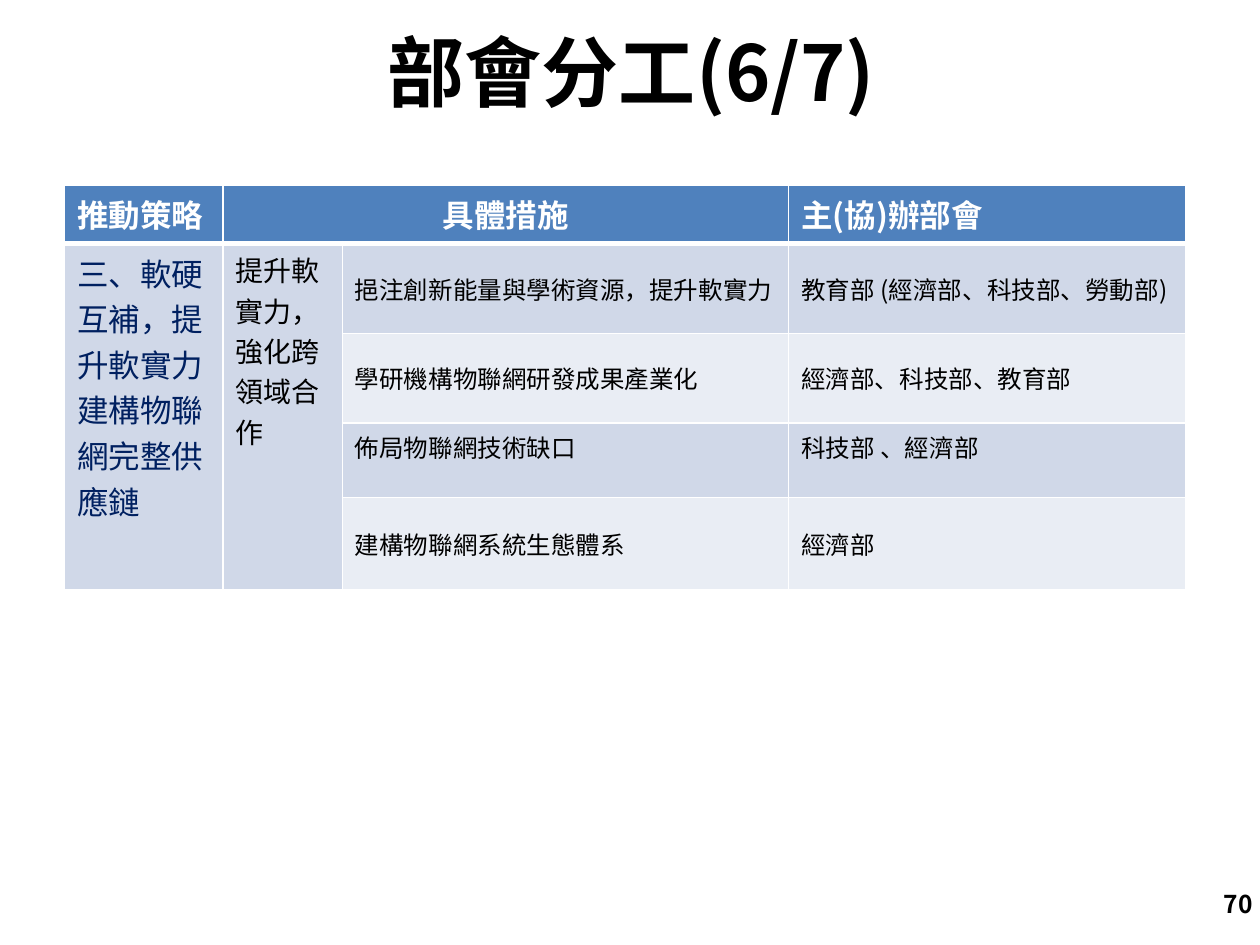
from lxml import etree
from pptx import Presentation
from pptx.dml.color import RGBColor
from pptx.enum.text import MSO_ANCHOR, PP_ALIGN
from pptx.oxml.ns import qn
from pptx.util import Cm, Pt

WHITE = RGBColor(0xFF, 0xFF, 0xFF)
BLACK = RGBColor(0, 0, 0)
NAVY = RGBColor(0x00, 0x20, 0x60)
BLUE = RGBColor(0x4F, 0x81, 0xBD)
BAND_DARK = RGBColor(0xD0, 0xD8, 0xE8)
BAND_LIGHT = RGBColor(0xE9, 0xED, 0xF4)
LEFT, CENTER, RIGHT = PP_ALIGN.LEFT, PP_ALIGN.CENTER, PP_ALIGN.RIGHT
TOP, MIDDLE, BOTTOM = MSO_ANCHOR.TOP, MSO_ANCHOR.MIDDLE, MSO_ANCHOR.BOTTOM
FONT = "Noto Sans CJK SC"


class Deck:
    def __init__(self):
        self.prs = Presentation()
        self.prs.slide_width, self.prs.slide_height = Cm(25.4), Cm(19.05)
        self.s = self.prs.slides.add_slide(self.prs.slide_layouts[5])

    def add_text(self, tf, text, size, color=BLACK, bold=False, align=LEFT):
        p = tf.paragraphs[0]
        p.alignment = align
        r = p.add_run()
        r.text = text
        for name, value in {"name": FONT, "size": Pt(size), "bold": bold}.items():
            setattr(r.font, name, value)
        r.font.color.rgb = color
        etree.SubElement(r.font._element, qn("a:ea"), typeface=FONT)
        return p

    def place(self, sp, box, anchor):
        sp.left, sp.top, sp.width, sp.height = (Cm(v) for v in box)
        sp.text_frame.word_wrap = True
        sp.text_frame.vertical_anchor = anchor
        return sp.text_frame

    def title(self, text, box):
        tf = self.place(self.s.shapes.title, box, BOTTOM)
        self.add_text(tf, text, 44, bold=True, align=CENTER).line_spacing = 0.9

    def page_number(self, text, box):
        sp = self.s.shapes.add_textbox(0, 0, 0, 0)
        self.add_text(self.place(sp, box, MIDDLE), text, 14, bold=True, align=RIGHT)

    def borders(self, cell, widths):
        tc_pr = cell._tc.get_or_add_tcPr()
        for i, (side, width) in enumerate(widths.items()):
            ln = etree.Element(qn("a:ln" + side), w=str(Pt(width)))
            fill = etree.SubElement(ln, qn("a:solidFill"))
            etree.SubElement(fill, qn("a:srgbClr"), val=str(WHITE))
            tc_pr.insert(i, ln)

    def table(self, left, top, cols, rows):
        shape = self.s.shapes.add_table(len(rows), len(cols), Cm(left), Cm(top),
                                        Cm(sum(cols)), Cm(sum(rows)))
        table = shape.table
        for col, width in zip(table.columns, cols):
            col.width = Cm(width)
        for row, height in zip(table.rows, rows):
            row.height = Cm(height)
        # Header colour, then alternating bands beside the merged columns
        for i in range(len(rows)):
            for j in range(len(cols)):
                cell = table.cell(i, j)
                cell.fill.solid()
                dark = j < 2 or i % 2
                cell.fill.fore_color.rgb = (
                    BLUE if i == 0 else BAND_DARK if dark else BAND_LIGHT)
                self.borders(cell, {"L": 1, "R": 1, "T": 3 if i == 1 else 1,
                                    "B": 3 if i == 0 else 1})
        return table

    def cell(self, cell, text, size, anchor=TOP, **style):
        cell.vertical_anchor = anchor
        self.add_text(cell.text_frame, text, size, **style)


def main():
    d = Deck()
    d.title("部會分工(6/7)", (1.3, 0, 22.86, 2.51))

    # Division of work
    table = d.table(1.3, 3.73, [3.2, 2.4, 9, 8], [0.84, 1.82, 1.8, 1.5, 1.87])
    table.cell(0, 1).merge(table.cell(0, 2))
    for col in (0, 1):
        table.cell(1, col).merge(table.cell(4, col))

    headers = [(0, "推動策略", LEFT), (1, "具體措施", CENTER),
               (3, "主(協)辦部會", LEFT)]
    for col, text, align in headers:
        d.cell(table.cell(0, col), text, 18, color=WHITE, bold=True, align=align)

    d.cell(table.cell(1, 0), "三、軟硬互補，提升軟實力建構物聯網完整供應鏈", 18,
           color=NAVY)
    d.cell(table.cell(1, 1), "提升軟實力，強化跨領域合作", 16)

    measures = [
        ("挹注創新能量與學術資源，提升軟實力", "教育部 (經濟部、科技部、勞動部)", MIDDLE),
        ("學研機構物聯網研發成果產業化", "經濟部、科技部、教育部", MIDDLE),
        ("佈局物聯網技術缺口", "科技部 、經濟部", TOP),
        ("建構物聯網系統生態體系", "經濟部", MIDDLE),
    ]
    for row, (measure, ministries, anchor) in enumerate(measures, 1):
        d.cell(table.cell(row, 2), measure, 14, anchor)
        d.cell(table.cell(row, 3), ministries, 14, anchor)

    # Page number
    d.page_number("70", (19.58, 17.7, 5.92, 1.02))
    d.prs.save("out.pptx")


if __name__ == "__main__":
    main()
